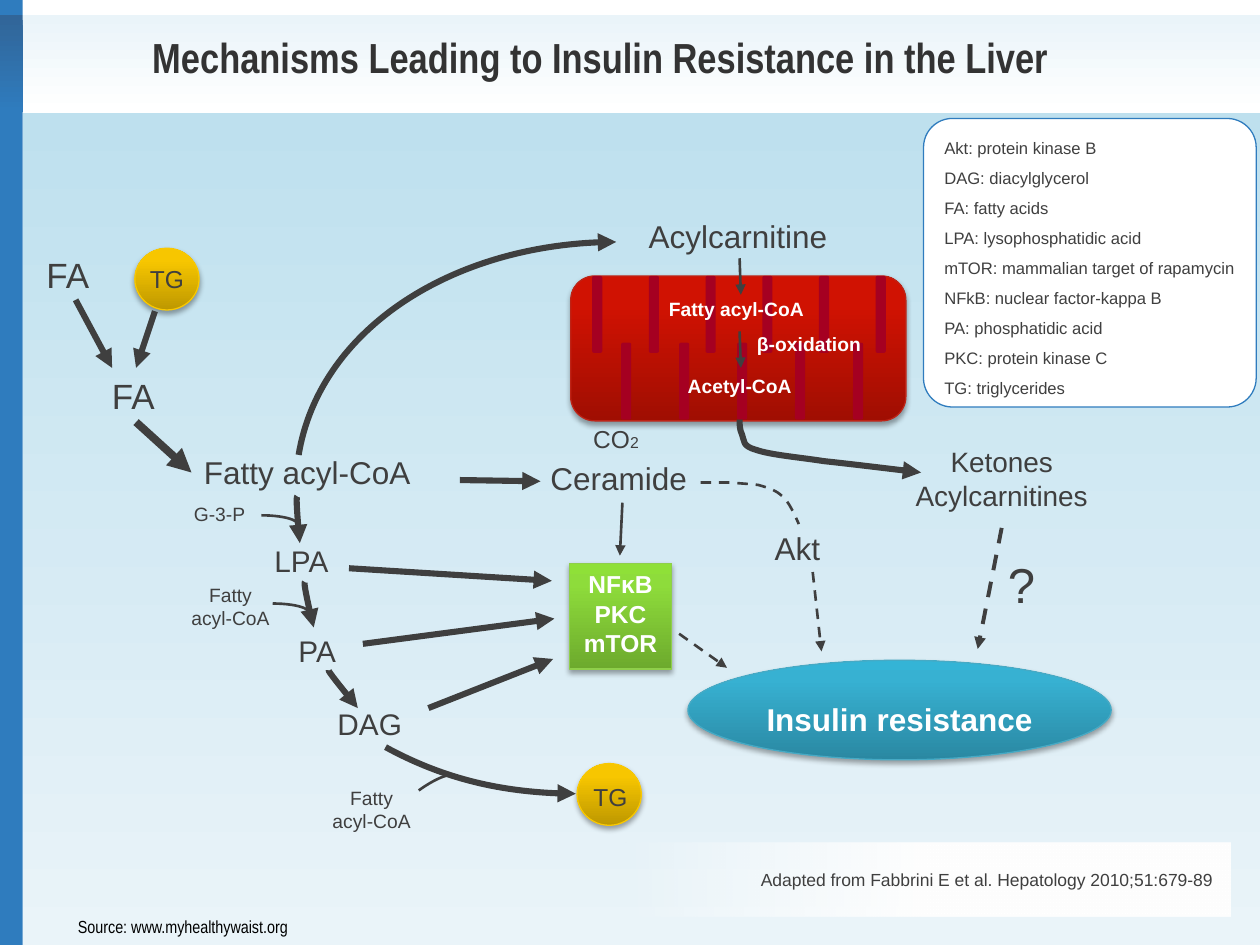
from lxml import etree
from pptx import Presentation
from pptx.dml.color import RGBColor
from pptx.enum.dml import MSO_LINE
from pptx.enum.shapes import MSO_CONNECTOR, MSO_SHAPE
from pptx.enum.text import MSO_ANCHOR, PP_ALIGN
from pptx.oxml.ns import qn
from pptx.util import Inches, Pt

rgb = RGBColor.from_string
INK, WHITE, BLUE = "3F3F3F", "FFFFFF", "2F7CBE"
LEFT, CENTER, RIGHT = PP_ALIGN.LEFT, PP_ALIGN.CENTER, PP_ALIGN.RIGHT
TOP, MIDDLE = MSO_ANCHOR.TOP, MSO_ANCHOR.MIDDLE

deck = Presentation()
deck.slide_width, deck.slide_height = Inches(10), Inches(7.5)
shapes = deck.slides.add_slide(deck.slide_layouts[6]).shapes


def add_panel(kind, at, fill, angle=90, line=None, shadow=False):
    """Add a shape; fill is a hex colour or a list of (percent, hex, alpha percent) stops."""
    panel = shapes.add_shape(kind, *map(Inches, at))
    if isinstance(fill, str):
        panel.fill.solid()
        panel.fill.fore_color.rgb = rgb(fill)
    else:
        panel.fill.gradient()
        panel.fill.gradient_angle = (360 - angle) % 360
        stops = panel._element.spPr.find(qn("a:gradFill")).find(qn("a:gsLst"))
        for stop in list(stops):
            stops.remove(stop)
        for percent, color, alpha in fill:
            stop = etree.SubElement(stops, qn("a:gs"), pos=str(percent * 1000))
            tint = etree.SubElement(stop, qn("a:srgbClr"), val=color)
            etree.SubElement(tint, qn("a:alpha"), val=str(alpha * 1000))
    if line:
        panel.line.color.rgb = rgb(line)
        panel.line.width = Pt(0.75)
    else:
        panel.line.fill.background()
    panel.shadow.inherit = False
    if shadow:
        effects = panel._element.spPr.find(qn("a:effectLst"))
        outer = etree.SubElement(effects, qn("a:outerShdw"), blurRad=str(Pt(3.1)),
                                 dist=str(Pt(1.8)), dir="5400000", rotWithShape="0")
        black = etree.SubElement(outer, qn("a:srgbClr"), val="000000")
        etree.SubElement(black, qn("a:alpha"), val="35000")
    return panel


def write(box, text, size, color=INK, align=LEFT, bold=False, font="Arial",
          anchor=TOP, spacing=None, wrap=False):
    frame = box.text_frame
    frame.word_wrap = wrap
    frame.vertical_anchor = anchor
    for index, line in enumerate(text.split("\n")):
        para = frame.add_paragraph() if index else frame.paragraphs[0]
        para.alignment = align
        para.line_spacing = spacing
        para.font.name, para.font.size, para.font.bold = font, Pt(size), bold
        para.font.color.rgb = rgb(color)
        para.add_run().text = line
    return frame


# Background bands
RECT, ROUND, OVAL = MSO_SHAPE.RECTANGLE, MSO_SHAPE.ROUNDED_RECTANGLE, MSO_SHAPE.OVAL
add_panel(RECT, (0, 0, 0.18, 7.5), BLUE)
for at, start, end in [
    ((0, 0.12, 10, 0.77), "EAF4F9", WHITE),
    ((0, 0.12, 0.18, 0.77), "316598", BLUE),
    ((0.18, 0.9, 9.82, 6.6), "BEE0EE", "EAF4F9"),
]:
    add_panel(RECT, at, [(0, start, 100), (100, end, 100)])
add_panel(RECT, (4.96, 6.69, 4.81, 0.58),
          [(0, WHITE, 0), (50, WHITE, 100), (100, WHITE, 100)], angle=0)

# Glossy shapes: dark at the bottom, bright at the top
GOLD = ("BE9800", "F7C600", "F8C700", "F9C800")
glossy = {}
for name, kind, at, (dark, bright, top, edge) in [
    ("mitochondrion", ROUND, (4.53, 2.19, 2.66, 1.15), ("A00E02", "D01202", "D31000", "BE2316")),
    ("resistance", OVAL, (5.46, 5.24, 3.36, 0.79), ("2A88A2", "37B1D2", "34B4D6", "46AAC5")),
    ("kinases", RECT, (4.52, 4.47, 0.81, 0.84), ("6DAA2D", "8EDC3B", "8FE038", "8FCF4B")),
    ("TG source", OVAL, (1.07, 1.97, 0.51, 0.49), GOLD),
    ("TG product", OVAL, (4.58, 6.06, 0.51, 0.49), GOLD),
]:
    stops = [(0, dark, 100), (80, bright, 100), (100, top, 100)]
    glossy[name] = add_panel(kind, at, stops, 270, edge, shadow=True)
write(glossy["resistance"], "Insulin resistance", 18, WHITE, CENTER, True, spacing=1.5)
write(glossy["kinases"], "NFĸB\nPKC\nmTOR", 14, WHITE, CENTER, True)

# Mitochondrial cristae
for count, left, step, top in [(6, 4.7, 0.45, 2.19), (5, 4.93, 0.46, 2.72)]:
    for index in range(count):
        add_panel(ROUND, (left + index * step, top, 0.08, 0.61), "A50021")

# Pathway strokes: two points make a straight line, more make cubic curves
SOLID, DASH = MSO_LINE.SOLID, MSO_LINE.DASH
for width, dash, arrow, points in [
    (4.5, SOLID, True, [(1.08, 3.35), (1.52, 3.75)]),
    (3.5, SOLID, True, [(0.6, 2.38), (0.89, 2.92)]),
    (3.5, SOLID, True, [(1.23, 2.47), (1.08, 2.92)]),
    (3.5, SOLID, True, [(3.65, 3.81), (4.29, 3.82)]),
    (3.5, SOLID, True, [(2.77, 4.51), (4.38, 4.61)]),
    (3.5, SOLID, True, [(2.88, 5.11), (4.4, 4.91)]),
    (3.5, SOLID, True, [(3.4, 5.62), (4.39, 5.23)]),
    (1.5, SOLID, True, [(4.94, 3.99), (4.92, 4.41)]),
    (1.5, SOLID, True, [(5.87, 2.05), (5.88, 2.34)]),
    (1.5, SOLID, True, [(5.87, 2.63), (5.88, 2.92)]),
    (2.25, DASH, True, [(7.95, 4.19), (7.76, 5.15)]),
    (1.5, DASH, True, [(6.45, 4.54), (6.52, 5.17)]),
    (1.5, DASH, True, [(5.39, 5.03), (5.77, 5.3)]),
    (3.5, SOLID, True, [(2.37, 3.61), (2.53, 2.64), (3.61, 1.92), (4.89, 1.92)]),
    (3.5, SOLID, True, [(2.36, 3.94), (2.35, 3.94), (2.36, 4.11), (2.38, 4.31)]),
    (3.5, SOLID, True, [(2.42, 4.62), (2.41, 4.62), (2.44, 4.78), (2.49, 4.98)]),
    (3.5, SOLID, True, [(2.61, 5.32), (2.6, 5.32), (2.71, 5.46), (2.84, 5.62)]),
    (3.5, SOLID, True, [(3.06, 5.93), (3.5, 6.17), (4.02, 6.3), (4.57, 6.3)]),
    (3.5, SOLID, True, [(5.87, 3.33), (5.87, 3.37), (5.87, 3.41), (5.89, 3.45),
                        (5.91, 3.5), (5.89, 3.54), (6, 3.57),
                        (6.11, 3.61), (6.35, 3.63), (6.54, 3.66),
                        (6.73, 3.68), (7.14, 3.73), (7.31, 3.75)]),
    (1.5, DASH, False, [(5.56, 3.83), (5.65, 3.83), (5.74, 3.83), (5.81, 3.83),
                        (5.89, 3.84), (5.95, 3.84), (6.02, 3.85),
                        (6.09, 3.87), (6.16, 3.89), (6.21, 3.94),
                        (6.26, 3.98), (6.31, 4.09), (6.34, 4.16)]),
]:
    start, *rest = [(Inches(x), Inches(y)) for x, y in points]
    if len(rest) == 1:
        stroke = shapes.add_connector(MSO_CONNECTOR.STRAIGHT, *start, *rest[0])
        etree.SubElement(stroke._element.spPr, qn("a:effectLst"))
    else:
        builder = shapes.build_freeform(*start)
        builder.add_line_segments(rest, close=False)
        stroke = builder.convert_to_shape()
        stroke.fill.background()
        stroke.shadow.inherit = False
        segments = list(stroke._element.spPr.iter(qn("a:lnTo")))
        outline = segments[0].getparent()
        for first in range(0, len(segments), 3):
            curve = etree.SubElement(outline, qn("a:cubicBezTo"))
            for segment in segments[first:first + 3]:
                curve.append(segment[0])
                outline.remove(segment)
    stroke.line.color.rgb = rgb(INK)
    stroke.line.width = Pt(width)
    stroke.line.dash_style = dash
    if arrow:
        etree.SubElement(stroke.line._get_or_add_ln(), qn("a:tailEnd"), type="triangle")

# Arcs where a substrate joins the pathway
for left, top, turn in [(1.79, 4.09, 0), (1.88, 4.79, 0), (3.08, 6.26, 324)]:
    arc = shapes.add_shape(MSO_SHAPE.ARC, *map(Inches, (left, top, 0.57, 0.14)))
    arc.rotation = turn
    arc.fill.background()
    arc.line.color.rgb = rgb(INK)
    arc.line.width = Pt(1.5)
    arc.shadow.inherit = False

# Labels
NARROW = {"font": "Arial Narrow"}
IN_RED = {"color": WHITE, "bold": True}
MID = {"align": CENTER}
for text, size, at, style in [
    ("Mechanisms Leading to Insulin Resistance in the Liver", 24, (1.11, 0.2, 8.41, 0.5),
     {"color": "333333", "bold": True, "anchor": MIDDLE, "wrap": True, **NARROW}),
    ("Adapted from Fabbrini E et al. Hepatology 2010;51:679-89", 10, (2.32, 6.68, 7.4, 0.6),
     {"align": RIGHT, "anchor": MIDDLE, "wrap": True}),
    ("Source: www.myhealthywaist.org", 10, (0.52, 7.22, 1.89, 0.27),
     {"color": "000000", **NARROW}),
    ("FA", 20, (0.27, 1.96, 0.57, 0.43), {}),
    ("FA", 20, (0.79, 2.92, 0.57, 0.43), {}),
    ("TG", 14, (1.09, 2.05, 0.47, 0.34), MID),
    ("TG", 14, (4.61, 6.16, 0.47, 0.34), MID),
    ("Fatty acyl-CoA", 18, (1.52, 3.55, 1.95, 0.4), {}),
    ("Acylcarnitine", 18, (5.05, 1.67, 1.65, 0.4), {}),
    ("Ceramide", 18, (4.27, 3.59, 1.34, 0.4), {}),
    ("Akt", 18, (6.05, 4.15, 0.6, 0.4), {}),
    ("Ketones\nAcylcarnitines", 16, (7.09, 3.48, 1.72, 0.64), MID),
    ("?", 28, (7.9, 4.35, 0.44, 0.57), {}),
    ("LPA", 17, (2.08, 4.26, 0.67, 0.38), {}),
    ("PA", 17, (2.27, 4.97, 0.53, 0.38), {}),
    ("DAG", 17, (2.58, 5.55, 0.73, 0.38), {}),
    ("G-3-P", 11, (1.44, 3.94, 0.61, 0.28), {}),
    ("Fatty\nacyl-CoA", 11, (1.4, 4.58, 0.86, 0.47), MID),
    ("Fatty\nacyl-CoA", 11, (2.52, 6.19, 0.86, 0.47), MID),
    ("Fatty acyl-CoA", 11, (5.21, 2.31, 1.28, 0.29), IN_RED),
    ("β-oxidation", 11, (5.91, 2.59, 1.03, 0.29), IN_RED),
    ("Acetyl-CoA", 11, (5.36, 2.92, 1.03, 0.29), IN_RED),
]:
    write(shapes.add_textbox(*map(Inches, at)), text, size, **style)

carbon_dioxide = shapes.add_textbox(*map(Inches, (4.61, 3.32, 0.56, 0.33)))
span = write(carbon_dioxide, "CO", 14).paragraphs[0].add_run()
span.text, span.font.size = "2", Pt(9)

# Abbreviations
legend = add_panel(ROUND, (7.33, 0.94, 2.64, 2.29), WHITE, line=BLUE)
legend.adjustments[0] = 0.1
frame = write(legend, """Akt: protein kinase B
DAG: diacylglycerol
FA: fatty acids
LPA: lysophosphatidic acid
mTOR: mammalian target of rapamycin
NFkB: nuclear factor-kappa B
PA: phosphatidic acid
PKC: protein kinase C
TG: triglycerides""", 9.5, anchor=MIDDLE, spacing=1.5, wrap=True)
frame.margin_left, frame.margin_right = Inches(0.1), Inches(0.05)
frame.margin_top = frame.margin_bottom = 0

deck.save("out.pptx")
